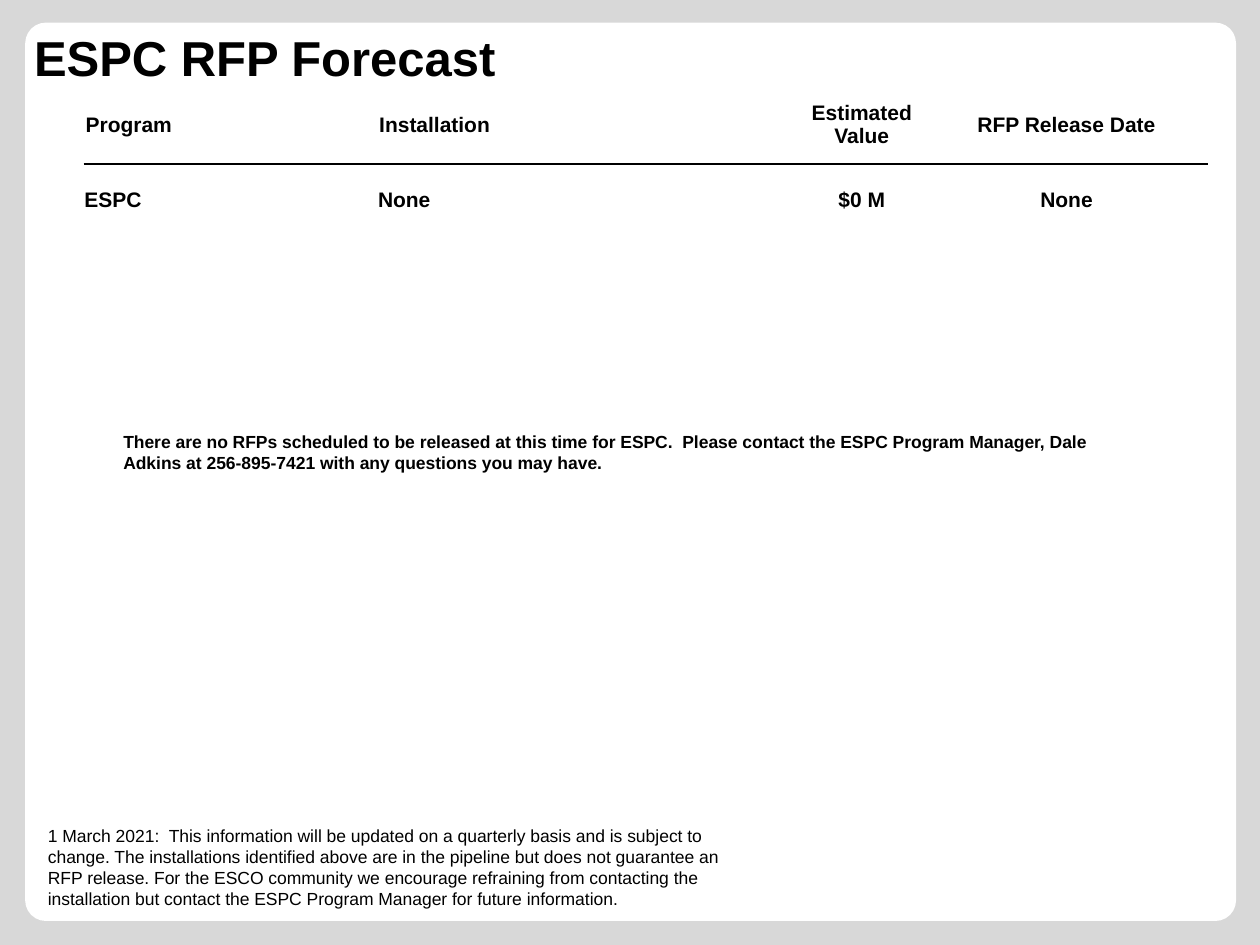
from lxml import etree
from pptx import Presentation
from pptx.dml.color import RGBColor
from pptx.enum import shapes, text
from pptx.oxml import ns
from pptx.util import Inches, Pt

COLORS = {"background": "D8D8D8", "panel": "FFFFFF", "ink": "000000"}
FONT = "Arial"
LEFT, CENTER = text.PP_ALIGN.LEFT, text.PP_ALIGN.CENTER

COLUMNS = [
    # heading, value, width, alignment
    ("Program", "ESPC", 2.33, LEFT),
    ("Installation", "None", 3.33, LEFT),
    ("Estimated Value", "$0 M", 1.02, CENTER),
    ("RFP Release Date", "None", 2.23, CENTER),
]
ROW_HEIGHTS = [0.63] + [0.57] * 4
CONTACT = (
    "There are no RFPs scheduled to be released at this time for ESPC.  "
    "Please contact the ESPC Program Manager, Dale Adkins at 256-895-7421 "
    "with any questions you may have."
)
DISCLAIMER = (
    "1 March 2021:  This information will be updated on a quarterly basis and is "
    "subject to change. The installations identified above are in the pipeline but "
    "does not guarantee an RFP release. For the ESCO community we encourage "
    "refraining from contacting the installation but contact the ESPC Program "
    "Manager for future information."
)


def color(name):
    return RGBColor.from_string(COLORS[name])


class ForecastSlide:
    def __init__(self, prs):
        self.s = prs.slides.add_slide(prs.slide_layouts[5])
        fill = self.s.background.fill
        fill.solid()
        fill.fore_color.rgb = color("background")

    def set_text(self, tf, content, size, bold=False, align=LEFT):
        tf.text = content
        p = tf.paragraphs[0]
        p.alignment = align
        font = p.runs[0].font
        font.name, font.size, font.bold = FONT, Pt(size), bold
        font.color.rgb = color("ink")

    def panel(self, x, y, w, h):
        sp = self.s.shapes.add_shape(
            shapes.MSO_SHAPE.ROUNDED_RECTANGLE, Inches(x), Inches(y), Inches(w), Inches(h))
        sp.adjustments[0] = 0.023
        sp.shadow.inherit = False
        sp.fill.solid()
        sp.fill.fore_color.rgb = color("panel")
        sp.line.fill.background()
        # Behind the title placeholder
        self.s.shapes._spTree.insert(2, sp._element)

    def title(self, content, x, y, w, h):
        sp = self.s.shapes.title
        sp.left, sp.top, sp.width, sp.height = map(Inches, (x, y, w, h))
        tf = sp.text_frame
        self.set_text(tf, content, 28, bold=True)
        tf.word_wrap = False
        tf.auto_size = text.MSO_AUTO_SIZE.NONE
        tf.vertical_anchor = text.MSO_ANCHOR.TOP

    def note(self, content, x, y, w, h, bold=False, margins=(0.1, 0.1)):
        tf = self.s.shapes.add_textbox(
            Inches(x), Inches(y), Inches(w), Inches(h)).text_frame
        tf.word_wrap = True
        tf.margin_left, tf.margin_right = map(Inches, margins)
        self.set_text(tf, content, 10, bold)

    def border(self, cell, side, name):
        tc_pr = cell._tc.get_or_add_tcPr()
        ln = etree.SubElement(tc_pr, ns.qn("a:ln" + side), w=str(Pt(1)))
        fill = etree.SubElement(ln, ns.qn("a:solidFill"))
        etree.SubElement(fill, ns.qn("a:srgbClr"), val=COLORS[name])

    def table(self, x, y):
        widths = [column[2] for column in COLUMNS]
        table = self.s.shapes.add_table(
            len(ROW_HEIGHTS), len(COLUMNS), Inches(x), Inches(y),
            Inches(sum(widths)), Inches(sum(ROW_HEIGHTS))).table
        table.first_row = table.horz_banding = False
        for row, height in zip(table.rows, ROW_HEIGHTS):
            row.height = Inches(height)
        for c, (heading, value, width, align) in enumerate(COLUMNS):
            table.columns[c].width = Inches(width)
            for r in range(len(ROW_HEIGHTS)):
                cell = table.cell(r, c)
                rule_side = {0: "B", 1: "T"}.get(r)
                for side in "LRTB":
                    self.border(cell, side, "ink" if side == rule_side else "panel")
                cell.fill.background()
                if r > 1:
                    continue
                margin = Inches(0.01 if r == 0 else 0)
                cell.margin_left = cell.margin_right = cell.margin_top = margin
                cell.margin_bottom = 0
                cell.vertical_anchor = text.MSO_ANCHOR.MIDDLE
                self.set_text(cell.text_frame, (heading, value)[r], 12, True, align)


def main():
    prs = Presentation()
    prs.slide_width, prs.slide_height = Inches(10), Inches(7.5)
    slide = ForecastSlide(prs)
    slide.panel(0.2, 0.18, 9.61, 7.13)
    slide.title("ESPC RFP Forecast", 0.17, 0.17, 4.01, 0.57)
    slide.note(DISCLAIMER, 0.33, 6.5, 5.42, 0.77, margins=(0.05, 0))
    slide.table(0.67, 0.67)
    slide.note(CONTACT, 0.88, 3.37, 8.25, 0.44, bold=True)
    prs.save("out.pptx")


if __name__ == "__main__":
    main()
